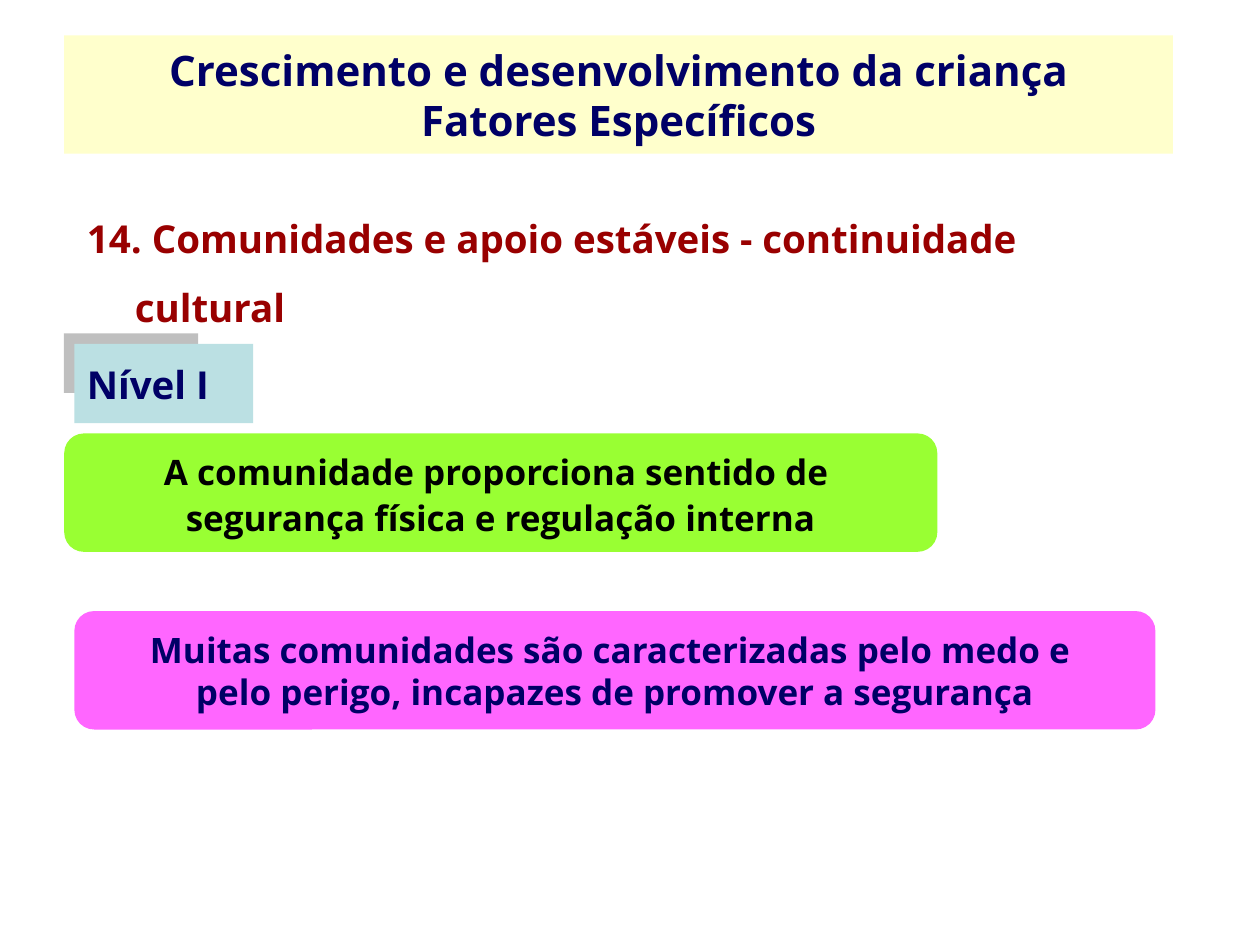
from lxml import etree
from pptx import Presentation, util as u
from pptx.dml.color import RGBColor
from pptx.enum import shapes, text
from pptx.oxml.ns import qn

FONT = "Open Sans"
NAVY = "000066"
LEFT, INDENTED = 0.51, 0.59
BAND_HEIGHT = 0.94


def place(shape, left, top, width, height):
    shape.left, shape.top = u.Inches(left), u.Inches(top)
    shape.width, shape.height = u.Inches(width), u.Inches(height)


def paint(shape, color):
    shape.fill.solid()
    shape.fill.fore_color.rgb = RGBColor.from_string(color)
    shape.line.fill.background()


def style(paragraph, size, color, align):
    paragraph.alignment = align
    font = paragraph.font
    font.name, font.size, font.bold = FONT, u.Pt(size), True
    font.color.rgb = RGBColor.from_string(color)


def add_panel(slide, kind, box, fill):
    panel = slide.shapes.add_shape(kind, *(u.Inches(length) for length in box))
    panel.shadow.inherit = False
    paint(panel, fill)
    return panel


def add_statement(slide, box, lines, fill, color, spacing=None):
    """Rounded band with one centred paragraph per line."""
    band = add_panel(slide, shapes.MSO_SHAPE.ROUNDED_RECTANGLE, box, fill)
    frame = band.text_frame
    frame.word_wrap = False
    frame.vertical_anchor = text.MSO_ANCHOR.MIDDLE
    frame.text = "\n".join(lines)
    for paragraph in frame.paragraphs:
        style(paragraph, 20, color, text.PP_ALIGN.CENTER)
        paragraph.line_spacing = spacing


def add_level_box(slide, box):
    """Box behind the level label, with a smaller shadow to its upper left."""
    level = add_panel(slide, shapes.MSO_SHAPE.RECTANGLE, box, "BBE0E3")
    effects = level._element.spPr.find(qn("a:effectLst"))
    shadow = etree.SubElement(effects, qn("a:outerShdw"), dist=str(u.Pt(8.5)),
                              dir=str(225 * 60000), sx="75000", sy="75000", algn="tl")
    color = etree.SubElement(shadow, qn("a:srgbClr"), val="808080")
    etree.SubElement(color, qn("a:alpha"), val="50000")


def fill_title(title, lines):
    place(title, LEFT, 0.28, 8.8, BAND_HEIGHT)
    paint(title, "FFFFCC")
    frame = title.text_frame
    frame.auto_size = text.MSO_AUTO_SIZE.NONE
    frame.vertical_anchor = text.MSO_ANCHOR.MIDDLE
    frame.text = "\v".join(lines)
    style(frame.paragraphs[0], 24, NAVY, text.PP_ALIGN.CENTER)


def fill_body(body, items):
    place(body, INDENTED, 1.47, 8.66, 5.28)
    frame = body.text_frame
    frame.auto_size = text.MSO_AUTO_SIZE.NONE
    frame.text = "\n".join(label for label, _ in items)
    for paragraph, (_, color) in zip(frame.paragraphs, items):
        paragraph.line_spacing = 1.5
        paragraph.space_before = u.Pt(4.4)
        properties = paragraph._p.get_or_add_pPr()
        properties.set("marL", str(u.Inches(0.38)))
        properties.set("indent", str(u.Inches(-0.38)))
        etree.SubElement(properties, qn("a:buNone"))
        style(paragraph, 22, color, text.PP_ALIGN.LEFT)


def main():
    deck = Presentation()
    deck.slide_width, deck.slide_height = u.Inches(10), u.Inches(7.5)
    slide = deck.slides.add_slide(deck.slide_layouts[1])
    title, body = slide.placeholders

    fill_title(title, ["Crescimento e desenvolvimento da criança", "Fatores Específicos"])
    add_level_box(slide, (INDENTED, 2.73, 1.42, 0.63))
    fill_body(body, [("14. Comunidades e apoio estáveis - continuidade cultural", "990000"),
                     ("Nível I", NAVY)])
    slide.shapes._spTree.append(body._element)  # label reads above its box
    add_statement(slide, (LEFT, 3.44, 6.93, BAND_HEIGHT),
                  ["A comunidade proporciona sentido de ",
                   "segurança física e regulação interna"],
                  "99FF33", "000000", spacing=1.1)
    add_statement(slide, (INDENTED, 4.85, 8.58, BAND_HEIGHT),
                  ["Muitas comunidades são caracterizadas pelo medo e ",
                   "pelo perigo, incapazes de promover a segurança"],
                  "FF66FF", NAVY)
    deck.save("out.pptx")


if __name__ == "__main__":
    main()
